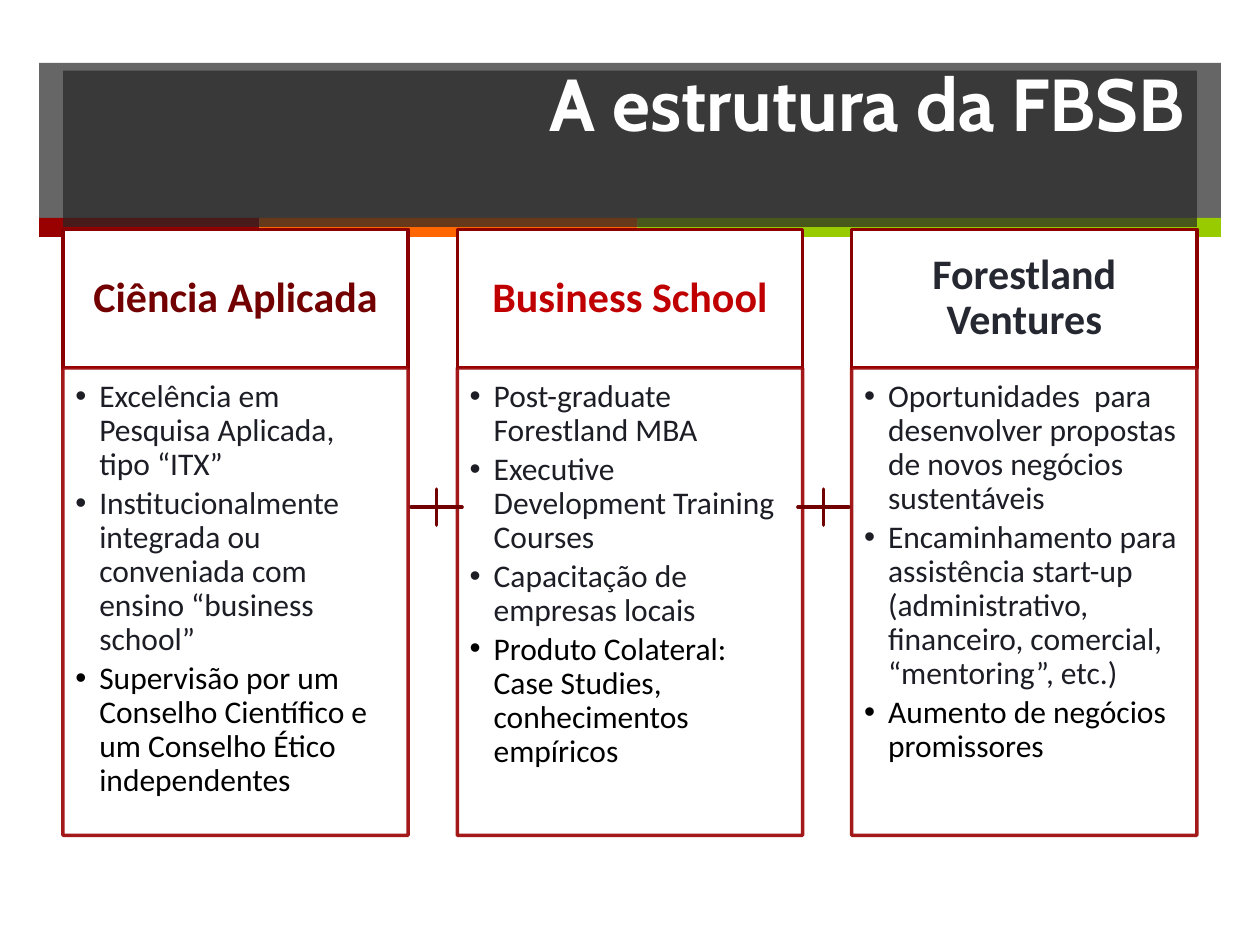
from lxml.etree import SubElement
from pptx import Presentation
from pptx.dml.color import RGBColor
from pptx.enum.shapes import MSO_SHAPE
from pptx.enum.text import MSO_ANCHOR, MSO_AUTO_SIZE, PP_ALIGN
from pptx.oxml.ns import qn
from pptx.util import Inches, Pt


def paint(color, value, alpha=100):
    """Set a colour from a hex string, with optional opacity in percent."""
    color.rgb = RGBColor.from_string(value)
    if alpha < 100:
        node = color._xFill.find(qn("a:srgbClr"))
        SubElement(node, qn("a:alpha"), val=str(alpha * 1000))


class Deck:
    dark, ink, red = "262626", "1C1D25", "990000"
    font, head = "Calibri", "Cabin"

    def __init__(self):
        self.prs = Presentation()
        self.prs.slide_width, self.prs.slide_height = Inches(10), Inches(7.5)
        self.slide = self.prs.slides.add_slide(self.prs.slide_layouts[5])

    def shape(self, x, y, w, h, fill, alpha=100, line=None, edge=100,
              kind=MSO_SHAPE.RECTANGLE):
        item = self.slide.shapes.add_shape(
            kind, Inches(x), Inches(y), Inches(w), Inches(h))
        item.shadow.inherit = False
        item.fill.solid()
        paint(item.fill.fore_color, fill, alpha)
        if line:
            item.line.width = Pt(2)
            item.line.fill.solid()
            paint(item.line.color, line, edge)
        else:
            item.line.fill.background()
        return item

    def frame(self, item, anchor, pads):
        box = item.text_frame
        box.word_wrap = True
        box.auto_size = MSO_AUTO_SIZE.NONE
        box.vertical_anchor = anchor
        (box.margin_left, box.margin_top,
         box.margin_right, box.margin_bottom) = map(Inches, pads)
        return box

    def run(self, para, text, size, color, font=font, bold=False):
        part = para.add_run()
        part.text = text
        part.font.size, part.font.name, part.font.bold = Pt(size), font, bold
        paint(part.font.color, color)

    def title(self, text, x, y, w, h):
        item = self.slide.shapes.title
        item.left, item.top, item.width, item.height = map(Inches, (x, y, w, h))
        item.fill.solid()
        paint(item.fill.fore_color, self.dark, 70)
        box = self.frame(item, MSO_ANCHOR.MIDDLE, (0.1, 0.05, 0.1, 0.05))
        para = box.paragraphs[0]
        para.alignment = PP_ALIGN.RIGHT
        self.run(para, text, 42, "FFFFFF", self.head, True)
        para.add_line_break()
        # Bring the title in front of the band
        self.slide.shapes._spTree.append(item._element)

    def label(self, text, color, x, y, w, h):
        item = self.shape(x, y, w, h, "FFFFFF", line="8B0000")
        box = self.frame(item, MSO_ANCHOR.MIDDLE, (0.19, 0.11, 0.19, 0.11))
        para = box.paragraphs[0]
        para.alignment = PP_ALIGN.CENTER
        para.line_spacing = 0.9
        self.run(para, text, 24, color, bold=True)

    def bullets(self, items, x, y, w, h):
        item = self.shape(x, y, w, h, "FFFFFF", 90, self.red, 90)
        box = self.frame(item, MSO_ANCHOR.TOP, (0.1, 0.1, 0.14, 0.16))
        for i, text in enumerate(items):
            para = box.add_paragraph() if i else box.paragraphs[0]
            para.alignment = PP_ALIGN.LEFT
            para.line_spacing = 0.9
            para.space_after = Pt(2.7)
            props = para._p.get_or_add_pPr()
            props.set("marL", str(Inches(0.19)))
            props.set("indent", str(Inches(-0.19)))
            SubElement(props, qn("a:buFont"), typeface="Arial")
            SubElement(props, qn("a:buChar"), char="•")
            # The closing point of each list is black
            last = i == len(items) - 1
            self.run(para, text, 18, "000000" if last else self.ink)

    def plus(self, x, y, w, h):
        item = self.shape(x, y, w, h, self.red, line="710000",
                          kind=MSO_SHAPE.MATH_PLUS)
        item.adjustments[0] = 0


COLUMNS = [
    ("Ciência Aplicada", "730000", [
        "Excelência em Pesquisa Aplicada, tipo “ITX”",
        "Institucionalmente integrada ou conveniada com ensino "
        "“business school”",
        "Supervisão por um Conselho Científico e um Conselho Ético "
        "independentes"]),
    ("Business School", "C00000", [
        "Post-graduate Forestland MBA",
        "Executive Development Training Courses",
        "Capacitação de empresas locais",
        "Produto Colateral: Case Studies, conhecimentos empíricos"]),
    ("Forestland Ventures", "252731", [
        "Oportunidades  para desenvolver propostas de novos negócios "
        "sustentáveis",
        "Encaminhamento para assistência start-up (administrativo, "
        "financeiro, comercial, “mentoring”, etc.)",
        "Aumento de negócios promissores"]),
]


def main():
    deck = Deck()

    # Header band with its coloured strip
    left = 0.31
    deck.shape(left, 0.5, 9.38, 1.24, deck.dark, 70)
    for wide, color in ((1.75, deck.red), (3, "FF6600"), (4.63, "99CC00")):
        deck.shape(left, 1.73, wide, 0.15, color)
        left += wide
    deck.title("A estrutura da FBSB", 0.5, 0.56, 9, 1.24)

    # Three columns, spread evenly under the title
    wide = 2.74
    step = (9 - wide) / 2
    for i, (name, color, items) in enumerate(COLUMNS):
        x = 0.5 + i * step
        deck.label(name, color, x, 1.82, wide, 1.1)
        deck.bullets(items, x, 2.92, wide, 3.71)

    # Plus signs between the columns
    for x in (3.19, 6.26):
        deck.plus(x, 3.83, 0.55, 0.39)

    deck.prs.save("out.pptx")


if __name__ == "__main__":
    main()
